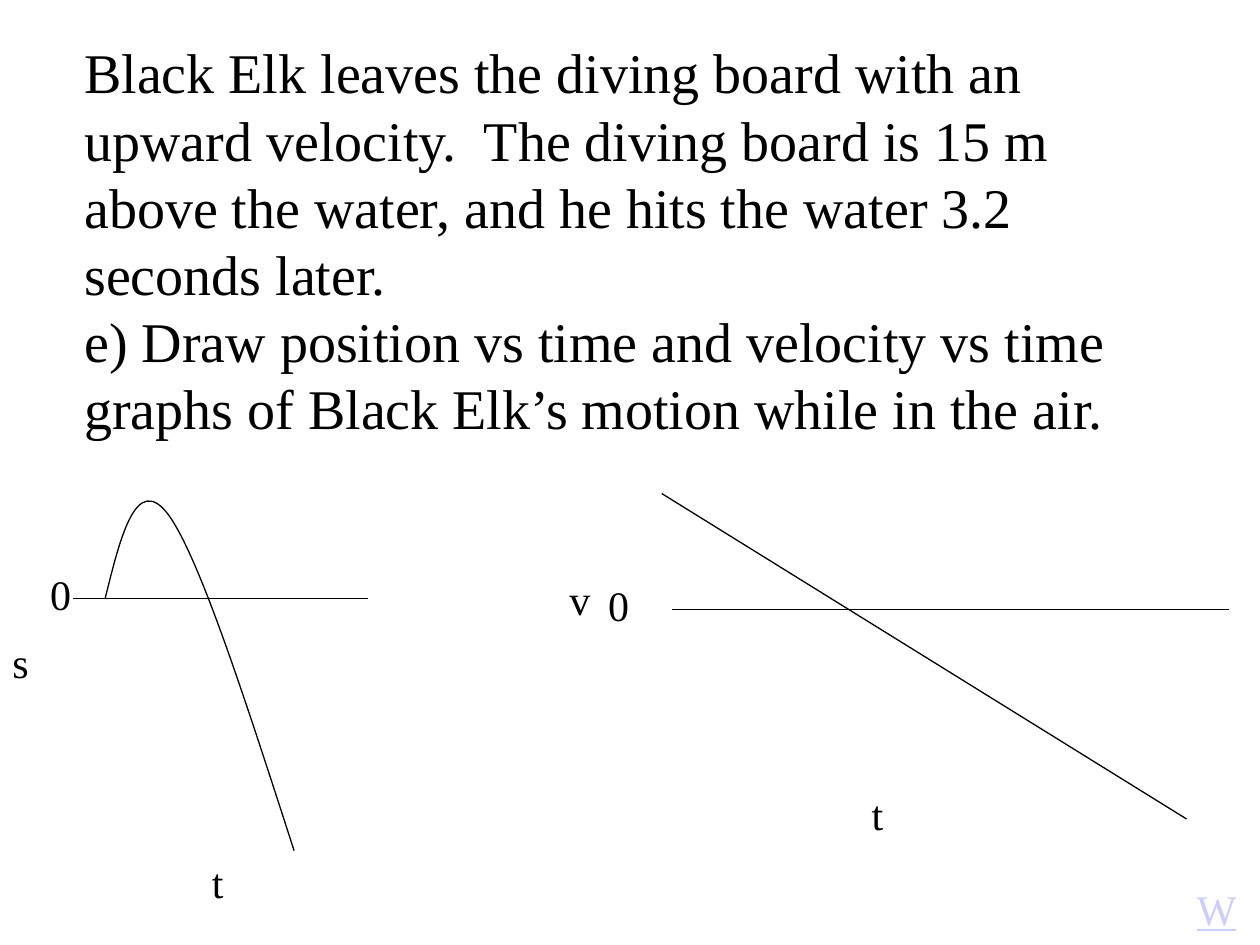
from dataclasses import dataclass

from lxml.etree import SubElement
from pptx import Presentation
from pptx.dml.color import RGBColor as RGB
from pptx.enum.shapes import MSO_CONNECTOR as CONN
from pptx.enum.text import MSO_AUTO_SIZE as AUTO
from pptx.oxml.ns import qn
from pptx.util import Cm, Pt


@dataclass(frozen=True)
class Theme:
    """Colours, font, type sizes and line width."""
    font: str = "Times New Roman"
    ink: RGB = RGB(0, 0, 0)
    pale: RGB = RGB(0xCC, 0xCC, 0xFF)
    body: int = 32
    label: int = 24
    line: float = 0.75


def add_text(tf, text, *, font, size, color, underline=None):
    """Write each line of text as a formatted paragraph."""
    for i, line in enumerate(text.split("\n")):
        p = tf.add_paragraph() if i else tf.paragraphs[0]
        r = p.add_run()
        r.text = line
        r.font.name, r.font.size = font, Pt(size)
        r.font.color.rgb = color
        r.font.underline = underline


class Builder:
    """Draws styled elements on the current slide."""

    def __init__(self, s, theme):
        """Keep the slide and its theme."""
        self.s, self.theme = s, theme

    def text(self, text, x, y, w, h=1.27, *, size=None, color=None, wrap=False, underline=None):
        """Add a text box."""
        t = self.theme
        tf = self.s.shapes.add_textbox(Cm(x), Cm(y), Cm(w), Cm(h)).text_frame
        tf.word_wrap = wrap
        tf.auto_size = AUTO.SHAPE_TO_FIT_TEXT
        add_text(tf, text, font=t.font, size=size or t.label,
                 color=color or t.ink, underline=underline)

    def stroke(self, sp):
        """Apply the thin line style."""
        sp.line.color.rgb = self.theme.ink
        sp.line.width = Pt(self.theme.line)

    def line(self, x1, y1, x2, y2):
        """Add a straight line."""
        sp = self.s.shapes.add_connector(CONN.STRAIGHT, Cm(x1), Cm(y1), Cm(x2), Cm(y2))
        self.stroke(sp)
        SubElement(sp._element.spPr, qn("a:effectLst"))

    def curve(self, *points):
        """Add a curve from a start point and three points per cubic segment."""
        start, *rest = [(Cm(x), Cm(y)) for x, y in points]
        fb = self.s.shapes.build_freeform(*start)
        fb.add_line_segments(rest, close=False)
        sp = fb.convert_to_shape()
        sp.shadow.inherit = False
        sp.fill.background()
        self.stroke(sp)
        segments = list(sp._element.iter(qn("a:lnTo")))
        outline = segments[0].getparent()
        for i in range(0, len(segments), 3):
            cubic = SubElement(outline, qn("a:cubicBezTo"))
            for segment in segments[i:i + 3]:
                cubic.append(segment[0])
                outline.remove(segment)


def main():
    """Build the slide and save it."""
    prs = Presentation()
    prs.slide_width, prs.slide_height = Cm(25.4), Cm(19.05)
    theme = Theme()
    b = Builder(prs.slides.add_slide(prs.slide_layouts[6]), theme)

    b.text("Black Elk leaves the diving board with an upward velocity.  "
           "The diving board is 15 m above the water, and he hits the water "
           "3.2 seconds later.\n"
           "e) Draw position vs time and velocity vs time graphs of "
           "Black Elk’s motion while in the air.",
           1.45, 0.64, 22.48, 8.38, size=theme.body, wrap=True)
    b.text("W", 23.88, 17.68, 1.32, color=theme.pale, underline=True)

    b.curve((2.12, 12.07), (2.43, 10.8), (2.75, 9.53), (3.39, 10.37),
            (4.02, 11.22), (4.97, 14.18), (5.93, 17.15))
    b.line(1.48, 12.07, 7.41, 12.07)
    b.line(13.55, 12.28, 24.77, 12.28)
    b.line(13.34, 9.95, 23.92, 16.51)

    for label, x, y, w in (
        ("s", 0, 12.7, 0.84), ("t", 4.02, 17.15, 0.74), ("0", 0.76, 11.33, 0.93),
        ("v", 11.23, 11.43, 0.93), ("t", 17.32, 15.77, 0.74), ("0", 12.01, 11.56, 0.93),
    ):
        b.text(label, x, y, w)

    prs.save("out.pptx")


if __name__ == "__main__":
    main()
